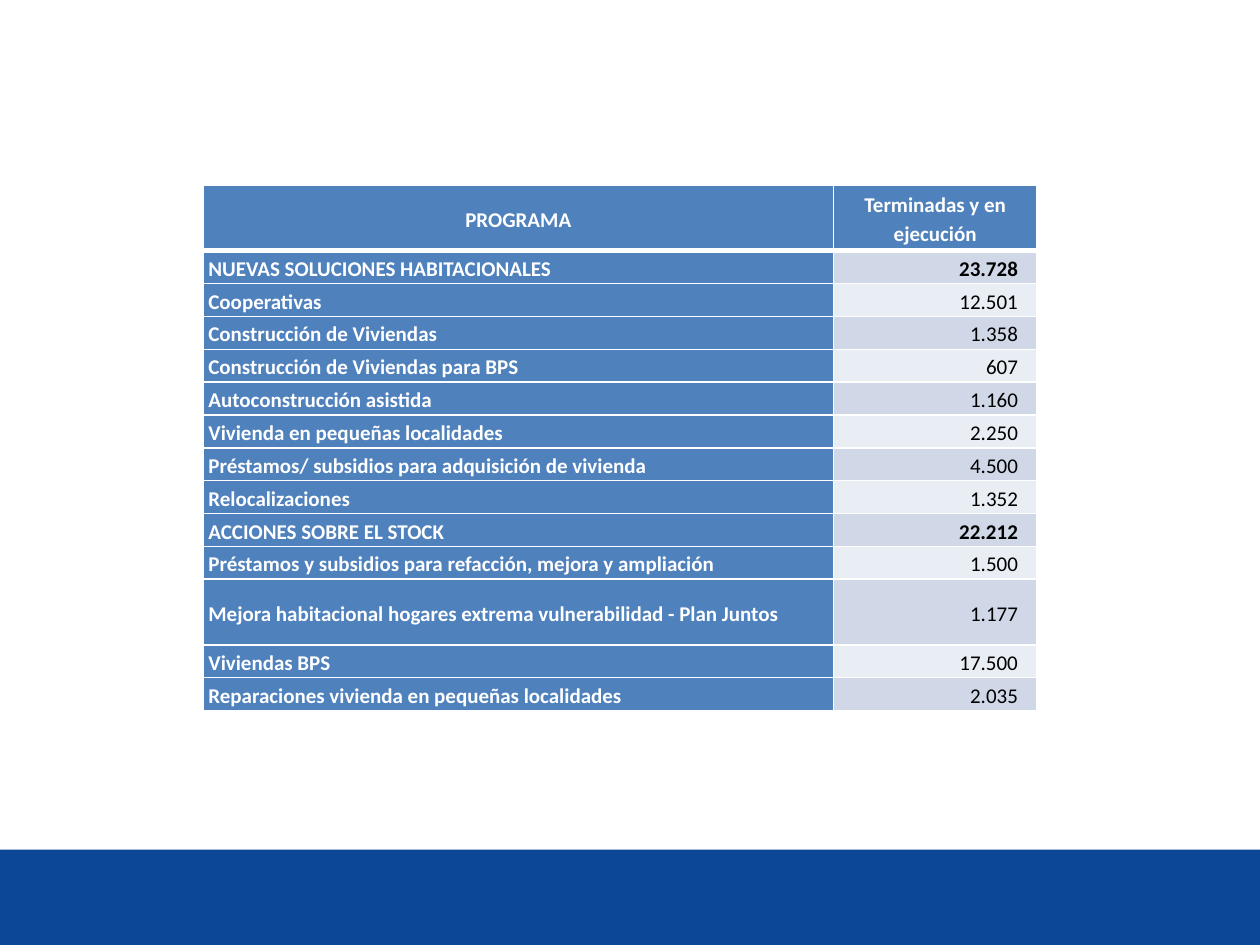
from pptx import Presentation
from pptx import util as u
from pptx.dml.color import RGBColor
from pptx.enum import shapes, text
from pptx.oxml import parse_xml
from pptx.oxml.ns import nsdecls

Pt = u.Pt
WIDE, HIGH = 720, 540
UNIT = 18.77  # height of a one-line row
COLS = (360, 116.5)
INK = {
    "band": "0B4697",
    "head": "4F81BD",
    "odd": "D0D8E8",
    "even": "E9EDF4",
    "white": "FFFFFF",
    "black": "000000",
}
HEAD = ("PROGRAMA", "Terminadas y en ejecución")
ROWS = [
    ("NUEVAS SOLUCIONES HABITACIONALES", "23.728"),
    ("Cooperativas", "12.501"),
    ("Construcción de Viviendas", "1.358"),
    ("Construcción de Viviendas para BPS", "607"),
    ("Autoconstrucción asistida", "1.160"),
    ("Vivienda en pequeñas localidades", "2.250"),
    ("Préstamos/ subsidios para adquisición de vivienda", "4.500"),
    ("Relocalizaciones", "1.352"),
    ("ACCIONES SOBRE EL STOCK", "22.212"),
    ("Préstamos y subsidios para refacción, mejora y ampliación", "1.500"),
    ("Mejora habitacional hogares extrema vulnerabilidad - Plan Juntos", "1.177"),
    ("Viviendas BPS", "17.500"),
    ("Reparaciones vivienda en pequeñas localidades", "2.035"),
]
TALL = (0, 11)  # rows of double height


def color(name):
    return RGBColor.from_string(INK[name])


def write(frame, words, ink="white", bold=True, align="LEFT"):
    para = frame.paragraphs[0]
    para.alignment = getattr(text.PP_ALIGN, align)
    para.line_spacing = 1.15
    run = para.add_run()
    run.text = words
    font = run.font
    font.name, font.size, font.bold = "Calibri", Pt(12), bold
    font.color.rgb = color(ink)


def border(cell, **sides):
    props = cell._tc.get_or_add_tcPr()
    for side, width in sides.items():
        props.append(parse_xml(
            f'<a:ln{side} {nsdecls("a")} w="{Pt(width)}"><a:solidFill>'
            f'<a:srgbClr val="{INK["white"]}"/></a:solidFill></a:ln{side}>'))


def style(cell, fill, right=2.9, top=1, base=1):
    cell.margin_left, cell.margin_right = Pt(2.9), Pt(right)
    cell.margin_top = cell.margin_bottom = 0
    cell.vertical_anchor = text.MSO_ANCHOR.MIDDLE
    border(cell, L=1, R=1, T=top, B=base)  # borders go before the fill
    cell.fill.solid()
    cell.fill.fore_color.rgb = color(fill)


def add_band(slide):
    band = slide.shapes.add_shape(
        shapes.MSO_SHAPE.RECTANGLE, 0, Pt(485.5), Pt(WIDE), Pt(HIGH - 485.5))
    band.shadow.inherit = False
    band.fill.solid()
    band.fill.fore_color.rgb = color("band")
    band.line.fill.background()


def add_grid(slide):
    count = len(ROWS) + 1
    grid = slide.shapes.add_table(
        count, len(COLS), Pt(116.2), Pt(105.8), Pt(sum(COLS)),
        Pt(UNIT * (count + len(TALL)))).table
    for col, width in zip(grid.columns, COLS):
        col.width = Pt(width)
    for i, row in enumerate(grid.rows):
        row.height = Pt(UNIT * (2 if i in TALL else 1))

    # Header
    for cell, words in zip(grid.rows[0].cells, HEAD):
        style(cell, "head", base=3)
        write(cell.text_frame, words, align="CENTER")

    # Programmes and their figures; group totals are in capitals
    for i, (name, value) in enumerate(ROWS, 1):
        left, right = grid.rows[i].cells
        top = 3 if i == 1 else 1
        style(left, "head", top=top)
        write(left.text_frame, name)
        style(right, "odd" if i % 2 else "even", right=11, top=top)
        write(right.text_frame, value, ink="black", bold=name.isupper(),
              align="RIGHT")


def main():
    deck = Presentation()
    deck.slide_width, deck.slide_height = Pt(WIDE), Pt(HIGH)
    slide = deck.slides.add_slide(deck.slide_layouts[6])
    add_band(slide)
    add_grid(slide)
    deck.save("out.pptx")


if __name__ == "__main__":
    main()
